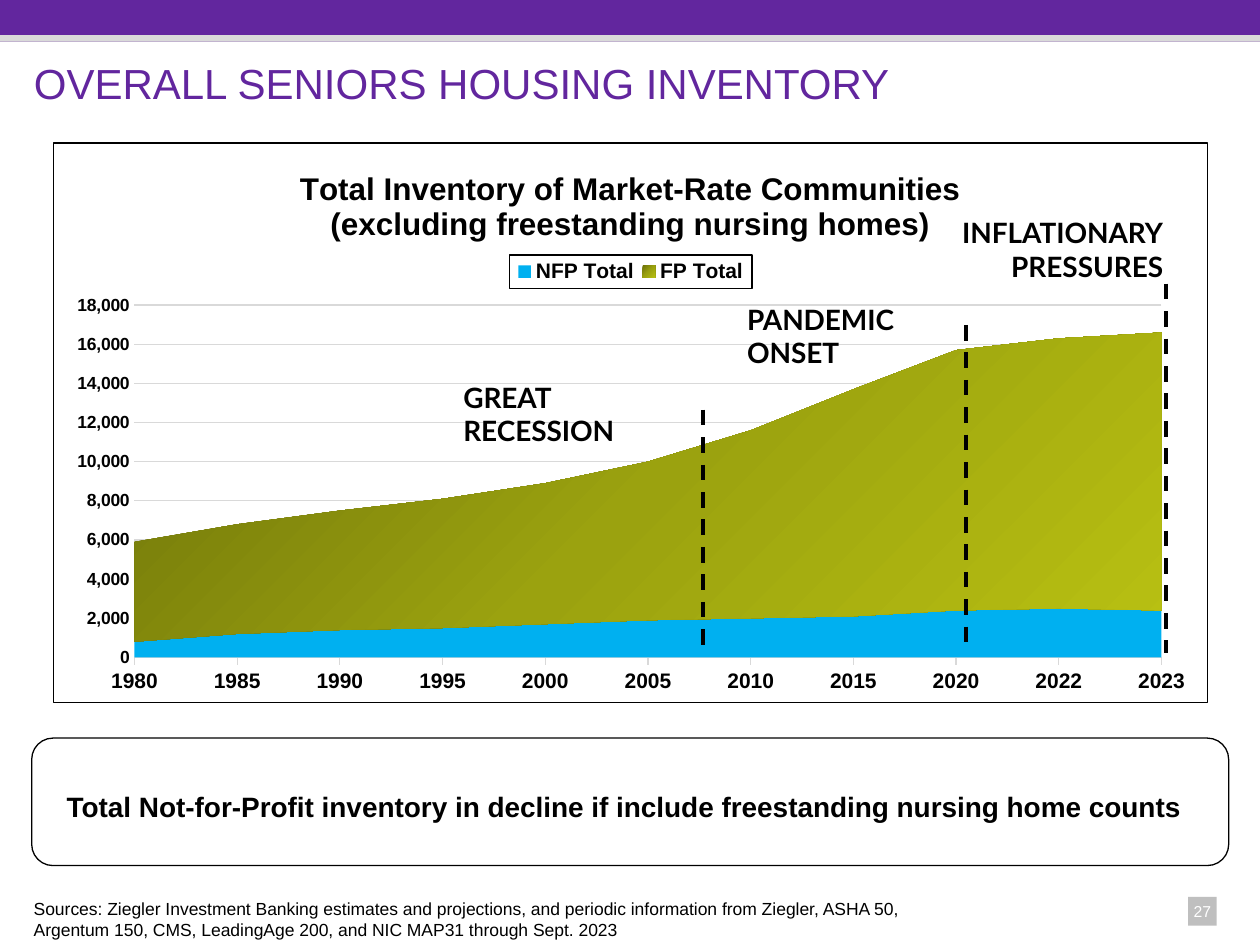
from lxml.etree import SubElement
from pptx import Presentation
from pptx.chart.data import CategoryChartData
from pptx.dml.color import RGBColor
from pptx.enum.chart import XL_CHART_TYPE, XL_LEGEND_POSITION, XL_TICK_MARK
from pptx.enum.dml import MSO_LINE
from pptx.enum.shapes import MSO_CONNECTOR, MSO_SHAPE
from pptx.enum.text import MSO_ANCHOR, PP_ALIGN
from pptx.oxml import parse_xml
from pptx.oxml.ns import nsdecls, qn
from pptx.util import Cm, Pt

COLORS = {"purple": "62269E", "strip": "D9D9D9", "badge": "BFBFBF", "white": "FFFFFF",
          "black": "000000", "nonprofit": "00B0F0"}
OLIVE_STOPS = [(0, "6D720A"), (50, "9BA20F"), (100, "B8C012")]
YEARS = ["1980", "1985", "1990", "1995", "2000", "2005", "2010", "2015", "2020", "2022", "2023"]
INVENTORY = {
    "NFP Total": [800, 1200, 1400, 1500, 1700, 1900, 2000, 2100, 2400, 2500, 2400],
    "FP Total": [5100, 5600, 6100, 6600, 7200, 8100, 9600, 11600, 13300, 13800, 14200],
}
EVENTS = [
    ("GREAT\vRECESSION", (8.02, 4.67, 5.26, 1.63), PP_ALIGN.LEFT, (13.1, 5.39, 10.26)),
    ("PANDEMIC\vONSET", (13.74, 3.1, 5.08, 1.63), PP_ALIGN.LEFT, (18.41, 3.68, 10.26)),
    ("INFLATIONARY\vPRESSURES", (17.98, 1.35, 4.65, 1.63), PP_ALIGN.RIGHT, (22.43, 2.85, 10.29)),
]


def rgb(name):
    """Return the named colour."""
    return RGBColor.from_string(COLORS[name])


def lengths(box):
    """Turn centimetre numbers into lengths."""
    return [Cm(value) for value in box]


def style_font(font, size, color="black", bold=False, name="Arial"):
    """Set the face, size, weight and colour of a font."""
    for key, value in {"name": name, "size": Pt(size), "bold": bold}.items():
        setattr(font, key, value)
    font.color.rgb = rgb(color)


def write_text(frame, text, font, align=PP_ALIGN.LEFT, **settings):
    """Write one paragraph into a text frame."""
    for key, value in {"word_wrap": True, **settings}.items():
        setattr(frame, key, value)
    para = frame.paragraphs[0]
    para.text = text
    para.alignment = align
    for span in para.runs:
        style_font(span.font, **font)


def add_block(page, box, fill=None, preset=MSO_SHAPE.RECTANGLE):
    """Add a filled block, or an outlined one when no fill is given."""
    block = page.shapes.add_shape(preset, *lengths(box))
    block.shadow.inherit = False
    if fill:
        block.fill.solid()
        block.fill.fore_color.rgb = rgb(fill)
        block.line.fill.background()
    else:
        block.fill.background()
        block.line.color.rgb = rgb("black")
        block.line.width = Pt(0.75)
    return block


def add_header(page, box):
    """Add the top band with its lower strip."""
    left, top, width, height = box
    strip = 0.13
    add_block(page, box, "purple")
    add_block(page, (left, top + height - strip, width, strip), "strip")


def add_title(page, box, text):
    """Place and format the title placeholder."""
    title = page.shapes.title
    title.left, title.top, title.width, title.height = lengths(box)
    write_text(title.text_frame, text, {"size": 24, "color": "purple"},
               vertical_anchor=MSO_ANCHOR.TOP)


def set_layout(element, target, box):
    """Fix a chart part at fractions of the chart area."""
    layout = element.get_or_add_layout() if hasattr(element, "get_or_add_layout") else element.find(qn("c:layout"))
    if layout is None:
        layout = parse_xml(f"<c:layout {nsdecls('c')}/>")
        element.insert(0, layout)
    for child in list(layout):
        layout.remove(child)
    manual = SubElement(layout, qn("c:manualLayout"))
    if target:
        SubElement(manual, qn("c:layoutTarget")).set("val", target)
    for key in ("xMode", "yMode"):
        SubElement(manual, qn(f"c:{key}")).set("val", "edge")
    for key, value in zip("xywh", box):
        SubElement(manual, qn(f"c:{key}")).set("val", str(value))


def style_axes(chart):
    """Format both axes and the grid."""
    years, units = chart.category_axis, chart.value_axis
    for axis, size, tick in ((years, 12, XL_TICK_MARK.OUTSIDE), (units, 10, XL_TICK_MARK.NONE)):
        axis.major_tick_mark = tick
        axis.minor_tick_mark = XL_TICK_MARK.NONE
        style_font(axis.tick_labels.font, size, bold=True)
    years.has_major_gridlines = False
    units.has_major_gridlines = True
    for line in (years.format.line, units.major_gridlines.format.line):
        line.color.rgb = rgb("strip")
        line.width = Pt(0.75)
    units.format.line.fill.background()
    units.minimum_scale, units.maximum_scale, units.major_unit = 0, 18000, 2000
    units.tick_labels.number_format = "#,##0"
    units.tick_labels.number_format_is_linked = False


def outline_xml():
    """Return shape properties for a thin black outline."""
    return parse_xml(f'<c:spPr {nsdecls("c", "a")}><a:ln w="9525"><a:solidFill>'
                     f'<a:srgbClr val="{COLORS["black"]}"/></a:solidFill></a:ln></c:spPr>')


def add_inventory_chart(page, box):
    """Add the stacked area chart of inventory."""
    data = CategoryChartData(number_format="#,##0")
    data.categories = YEARS
    for name, values in INVENTORY.items():
        data.add_series(name, values)
    chart = page.shapes.add_chart(XL_CHART_TYPE.AREA_STACKED, *lengths(box), data).chart
    style_font(chart.font, 10)
    style_axes(chart)
    nonprofit, profit = chart.plots[0].series
    nonprofit.format.fill.solid()
    nonprofit.format.fill.fore_color.rgb = rgb("nonprofit")
    stops = "".join(f'<a:gs pos="{position * 1000}"><a:srgbClr val="{color}"/></a:gs>'
                    for position, color in OLIVE_STOPS)
    profit.format.fill.background()
    properties = profit.format.fill._xPr
    properties.replace(properties[0], parse_xml(
        f'<a:gradFill {nsdecls("a")}><a:gsLst>{stops}</a:gsLst><a:lin ang="2700000"/></a:gradFill>'))

    chart.has_title = True
    frame = chart.chart_title.text_frame
    frame.text = "Total Inventory of Market-Rate Communities\n(excluding freestanding nursing homes)"
    for para in frame.paragraphs:
        para.alignment = PP_ALIGN.CENTER
        for span in para.runs:
            style_font(span.font, 18, bold=True)
    chart.chart_title.include_in_layout = False
    set_layout(chart.chart_title._element, None, (0.21, 0.04))

    chart.has_legend = True
    chart.legend.position = XL_LEGEND_POSITION.TOP
    chart.legend.include_in_layout = False
    style_font(chart.legend.font, 12, bold=True)
    legend = chart.legend._element
    set_layout(legend, None, (0.395, 0.2, 0.21, 0.06))
    legend.find(qn("c:txPr")).addprevious(outline_xml())
    set_layout(chart._chartSpace.chart.plotArea, "inner", (0.07, 0.29, 0.89, 0.63))
    chart._chartSpace.chart.addnext(outline_xml())


def add_events(page, box):
    """Add dashed event markers and their labels over the chart."""
    left, top = box[:2]
    for text, (x, y, width, height), align, (marker, start, end) in EVENTS:
        line = page.shapes.add_connector(MSO_CONNECTOR.STRAIGHT, *lengths(
            (left + marker, top + start, left + marker, top + end)))
        line.line.color.rgb = rgb("black")
        line.line.width = Pt(2.25)
        line.line.dash_style = MSO_LINE.DASH
        SubElement(line._element.spPr, qn("a:effectLst"))
        label = page.shapes.add_textbox(*lengths((left + x, top + y, width, height)))
        write_text(label.text_frame, text, {"size": 16, "bold": True, "name": "Lato"}, align)


def add_callout(page, box, text):
    """Add the rounded takeaway box."""
    callout = add_block(page, box, preset=MSO_SHAPE.ROUNDED_RECTANGLE)
    write_text(callout.text_frame, text, {"size": 16, "bold": True},
               vertical_anchor=MSO_ANCHOR.MIDDLE, margin_left=Cm(0.58),
               margin_right=Cm(0.25), margin_top=Cm(0.2), margin_bottom=0)


def add_footer(page, box, sources, number):
    """Add the sources and the page number badge."""
    left, top, width, height = box
    note = page.shapes.add_textbox(*lengths((left, top, 19.05, height)))
    write_text(note.text_frame, sources, {"size": 10})
    badge = add_block(page, (left + width - 0.58, top + 0.1, 0.58, 0.58), "badge")
    write_text(badge.text_frame, number, {"size": 9, "color": "white"}, PP_ALIGN.CENTER,
               word_wrap=False, vertical_anchor=MSO_ANCHOR.MIDDLE,
               margin_left=0, margin_right=0, margin_top=0, margin_bottom=0)


def main():
    """Build and save the deck."""
    deck = Presentation()
    deck.slide_width, deck.slide_height = Cm(25.4), Cm(19.05)
    page = deck.slides.add_slide(deck.slide_layouts[5])
    chart_box = (1.07, 2.87, 23.29, 11.3)
    add_header(page, (0, 0, 25.4, 0.84))
    add_title(page, (0.43, 1.04, 24.56, 2.34), "OVERALL SENIORS HOUSING INVENTORY")
    add_inventory_chart(page, chart_box)
    add_events(page, chart_box)
    add_callout(page, (0.64, 14.88, 24.13, 2.57),
                "Total Not-for-Profit inventory in decline if include freestanding nursing home counts")
    add_footer(page, (0.43, 17.98, 24.1, 1.07),
               "Sources: Ziegler Investment Banking estimates and projections, and periodic information "
               "from Ziegler, ASHA 50, Argentum 150, CMS, LeadingAge 200, and NIC MAP31 through Sept. 2023", "27")
    deck.save("out.pptx")


if __name__ == "__main__":
    main()
